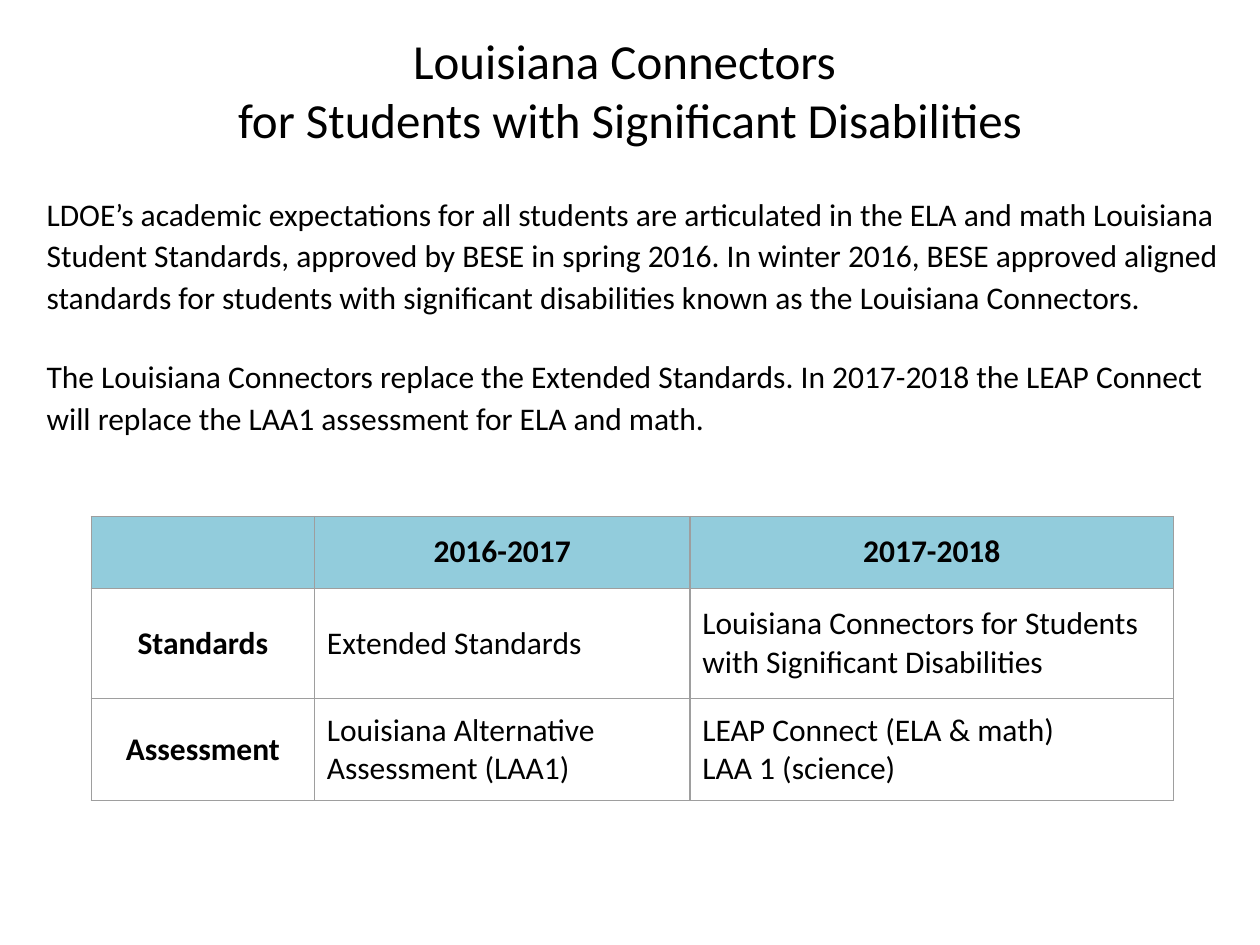
from lxml import etree
from pptx import Presentation
from pptx.dml.color import RGBColor
from pptx.enum.text import MSO_ANCHOR, PP_ALIGN
from pptx.oxml.ns import qn
from pptx.util import Cm, Pt

CENTER, LEFT = PP_ALIGN.CENTER, PP_ALIGN.LEFT
MIDDLE, TOP = MSO_ANCHOR.MIDDLE, MSO_ANCHOR.TOP
FONT = "Calibri"
COLORS = {"text": "000000", "header": "92CCDC", "border": "9E9E9E"}
INSET = Cm(0.25)
BORDER_WIDTH = Pt(0.75)

TITLE = ["Louisiana Connectors ", "for Students with Significant Disabilities"]
BODY = [
    "LDOE’s academic expectations for all students are articulated in the ELA and math "
    "Louisiana Student Standards, approved by BESE in spring 2016. In winter 2016, BESE "
    "approved aligned standards for students with significant disabilities known as the "
    "Louisiana Connectors.",
    "The Louisiana Connectors replace the Extended Standards. In 2017-2018 the LEAP Connect "
    "will replace the LAA1 assessment for ELA and math.",
]
TRANSITION = [
    [[], ["2016-2017"], ["2017-2018"]],
    [["Standards"], ["Extended Standards"],
     ["Louisiana Connectors for Students with Significant Disabilities"]],
    [["Assessment"], ["Louisiana Alternative Assessment (LAA1)"],
     ["LEAP Connect (ELA & math)", "LAA 1 (science)"]],
]
COLUMN_WIDTHS = [Cm(4.5), Cm(7.57), Cm(9.75)]
ROW_HEIGHTS = [Cm(1.45), Cm(2.22), Cm(2.06)]
ROW_INSETS = [Cm(0.33), Cm(0.33), INSET]


def write_paragraphs(frame, lines, size, align=LEFT, bold=False, spacing=None, gap=None):
    for index, line in enumerate(lines):
        paragraph = frame.add_paragraph() if index else frame.paragraphs[0]
        paragraph.alignment = align
        if spacing:
            paragraph.line_spacing = spacing
        if gap and index:
            paragraph.space_before = gap
        run = paragraph.add_run()
        run.text = line
        run.font.name = FONT
        run.font.size = size
        run.font.bold = bold
        run.font.color.rgb = RGBColor.from_string(COLORS["text"])


def add_text(slide, left, top, width, height, lines, size, anchor=TOP, **style):
    frame = slide.shapes.add_textbox(left, top, width, height).text_frame
    frame.word_wrap = True
    frame.vertical_anchor = anchor
    frame.margin_left = frame.margin_right = INSET
    frame.margin_top = frame.margin_bottom = INSET
    write_paragraphs(frame, lines, size, **style)


def set_borders(cell):
    properties = cell._tc.get_or_add_tcPr()
    for position, side in enumerate(("lnL", "lnR", "lnT", "lnB")):
        line = etree.Element(qn(f"a:{side}"), w=str(BORDER_WIDTH))
        fill = etree.SubElement(line, qn("a:solidFill"))
        etree.SubElement(fill, qn("a:srgbClr"), val=COLORS["border"])
        properties.insert(position, line)


def fill_cell(cell, lines, row, column):
    is_header = row == 0
    is_label = is_header or column == 0
    cell.margin_left = cell.margin_right = INSET
    cell.margin_top = cell.margin_bottom = ROW_INSETS[row]
    cell.vertical_anchor = TOP if is_header else MIDDLE
    if is_header:
        cell.fill.solid()
        cell.fill.fore_color.rgb = RGBColor.from_string(COLORS["header"])
    else:
        cell.fill.background()
    set_borders(cell)
    write_paragraphs(cell.text_frame, lines, Pt(18), CENTER if is_label else LEFT, is_label)


def add_transition_table(slide, left, top):
    table = slide.shapes.add_table(
        len(ROW_HEIGHTS), len(COLUMN_WIDTHS), left, top,
        sum(COLUMN_WIDTHS), sum(ROW_HEIGHTS)).table
    table.horz_banding = False
    for column, width in zip(table.columns, COLUMN_WIDTHS):
        column.width = width
    for row, height in zip(table.rows, ROW_HEIGHTS):
        row.height = height
    for row, entries in enumerate(TRANSITION):
        for column, lines in enumerate(entries):
            fill_cell(table.cell(row, column), lines, row, column)


def main():
    deck = Presentation()
    deck.slide_width, deck.slide_height = Cm(25.4), Cm(19.05)
    slide = deck.slides.add_slide(deck.slide_layouts[6])
    add_text(slide, 0, 0, Cm(25.4), Cm(3.6), TITLE, Pt(28), MIDDLE, align=CENTER)
    add_text(slide, Cm(0.69), Cm(3.6), Cm(24.13), Cm(7), BODY, Pt(18),
             spacing=1.1, gap=Pt(21.5))
    add_transition_table(slide, Cm(1.84), Cm(10.41))
    deck.save("out.pptx")


if __name__ == "__main__":
    main()
